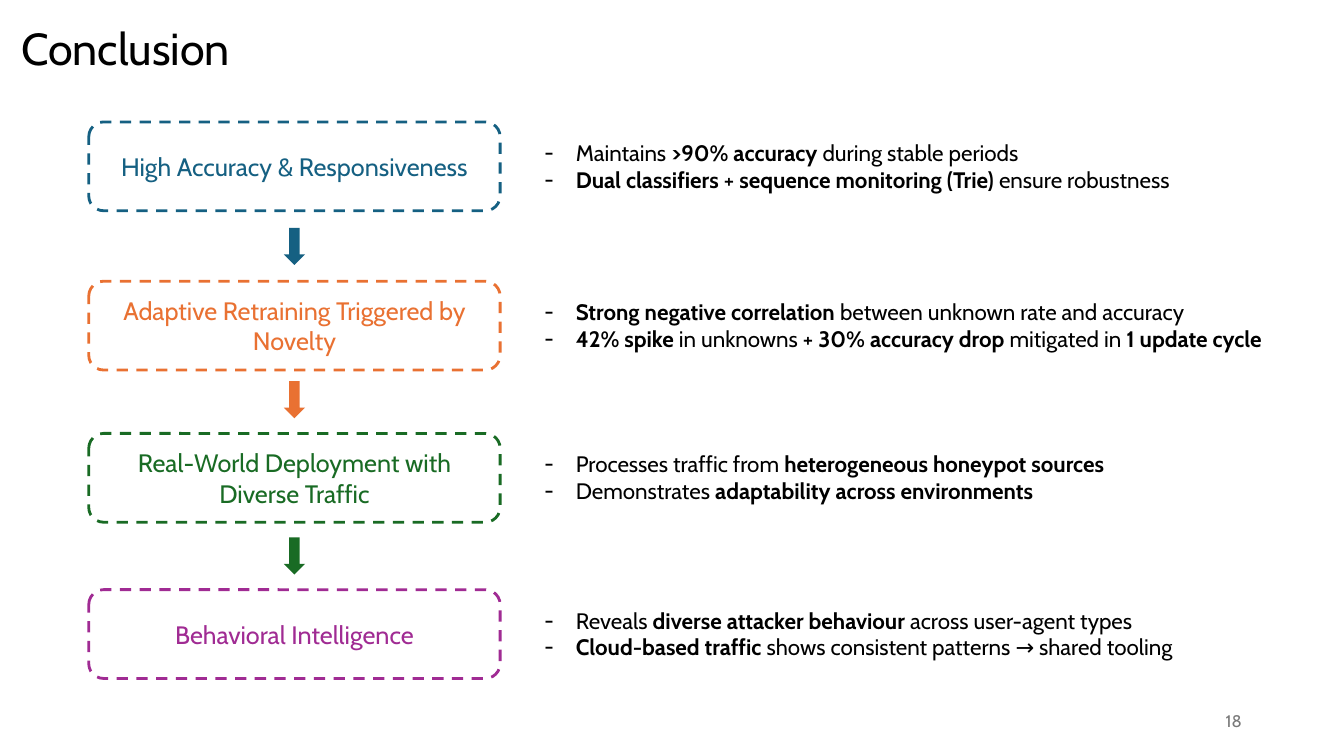
from lxml import etree
from pptx import Presentation
from pptx.dml.color import RGBColor
from pptx.enum.dml import MSO_LINE
from pptx.enum.shapes import MSO_SHAPE
from pptx.enum.text import MSO_ANCHOR, MSO_AUTO_SIZE, PP_ALIGN
from pptx.oxml.ns import qn
from pptx.util import Pt

DASH = MSO_LINE.DASH
ROUNDED, DOWN_ARROW = MSO_SHAPE.ROUNDED_RECTANGLE, MSO_SHAPE.DOWN_ARROW
TOP, MIDDLE = MSO_ANCHOR.TOP, MSO_ANCHOR.MIDDLE
NO_AUTOFIT = MSO_AUTO_SIZE.NONE
LEFT, CENTER, RIGHT = PP_ALIGN.LEFT, PP_ALIGN.CENTER, PP_ALIGN.RIGHT

BLACK = RGBColor(0x00, 0x00, 0x00)
WHITE = RGBColor(0xFF, 0xFF, 0xFF)
GRAY = RGBColor(0x79, 0x79, 0x79)
BLUE = RGBColor(0x15, 0x60, 0x82)
ORANGE = RGBColor(0xE9, 0x71, 0x32)
GREEN = RGBColor(0x19, 0x6B, 0x24)
PURPLE = RGBColor(0xA0, 0x2B, 0x93)

FONT = "Cabin"
BOX_LEFT, BOX_WIDTH, BOX_HEIGHT = 63.4, 293.8, 63.4
ARROW_WIDTH, ARROW_HEIGHT = 15.1, 26.6
LIST_LEFT, LIST_HEIGHT, LIST_OFFSET = 381.6, 46, 8.6
LIST_INDENT = 22.5

CONCLUSIONS = [
    ("High Accuracy & Responsiveness", BLUE, 87.1, 162.7, 523, [
        "Maintains *>90% accuracy* during stable periods",
        "*Dual classifiers* + *sequence monitoring (Trie)* ensure robustness"]),
    ("Adaptive Retraining Triggered by Novelty", ORANGE, 200.9, 272.2, 578, [
        "*Strong negative correlation* between unknown rate and accuracy",
        "*42% spike* in unknowns + *30% accuracy drop* mitigated in *1 update cycle*"]),
    ("Real-World Deployment with Diverse Traffic", GREEN, 309.6, 383.8, 482, [
        "Processes traffic from *heterogeneous honeypot sources*",
        "Demonstrates *adaptability across environments*"]),
    ("Behavioral Intelligence", PURPLE, 421.2, None, 482, [
        "Reveals *diverse attacker behaviour *across user-agent types",
        "*Cloud-based traffic *shows consistent patterns → shared tooling"]),
]


def place(shape, left, top, width, height, anchor):
    shape.left, shape.top = Pt(left), Pt(top)
    shape.width, shape.height = Pt(width), Pt(height)
    frame = shape.text_frame
    frame.word_wrap = True
    frame.auto_size = NO_AUTOFIT
    frame.vertical_anchor = anchor
    return frame


def add_run(paragraph, text, size, color, bold=False):
    run = paragraph.add_run()
    run.text = text
    run.font.name = FONT
    run.font.size = Pt(size)
    run.font.bold = bold
    run.font.color.rgb = color


presentation = Presentation()
presentation.slide_width, presentation.slide_height = Pt(960), Pt(540)
comparison_layout = presentation.slide_layouts[4]
slide = presentation.slides.add_slide(comparison_layout)

title = place(slide.shapes.title, 7.9, 10.1, 853.2, 28.8, MIDDLE).paragraphs[0]
title.alignment = LEFT
title.line_spacing = 1.5
add_run(title, "Conclusion", 32, BLACK)

number_box = slide.shapes.add_textbox(0, 0, 0, 0)
number = place(number_box, 678.2, 500.4, 216, 28.8, MIDDLE).paragraphs[0]
number.alignment = RIGHT
add_run(number, "18", 12, GRAY)

for index, (heading, color, top, arrow_top, list_width, points) in enumerate(CONCLUSIONS, 1):
    box = slide.shapes.add_shape(ROUNDED, 0, 0, 0, 0)
    label = place(box, BOX_LEFT, top, BOX_WIDTH, BOX_HEIGHT, MIDDLE).paragraphs[0]
    box.shadow.inherit = False
    box.fill.solid()
    box.fill.fore_color.rgb = WHITE
    box.line.color.rgb = color
    box.line.width = Pt(2)
    box.line.dash_style = DASH
    label.alignment = CENTER
    add_run(label, heading, 18, color)

    if arrow_top is not None:
        arrow_left = BOX_LEFT + (BOX_WIDTH - ARROW_WIDTH) / 2
        arrow = slide.shapes.add_shape(
            DOWN_ARROW, Pt(arrow_left), Pt(arrow_top), Pt(ARROW_WIDTH), Pt(ARROW_HEIGHT))
        arrow.shadow.inherit = False
        arrow.fill.solid()
        arrow.fill.fore_color.rgb = color
        arrow.line.fill.background()

    frame = place(slide.placeholders[index], LIST_LEFT, top + LIST_OFFSET,
                  list_width, LIST_HEIGHT, TOP)
    for position, point in enumerate(points):
        paragraph = frame.add_paragraph() if position else frame.paragraphs[0]
        properties = paragraph._p.get_or_add_pPr()
        properties.set("marL", str(Pt(LIST_INDENT)))
        properties.set("indent", str(-Pt(LIST_INDENT)))
        etree.SubElement(properties, qn("a:buFont")).set("typeface", FONT)
        etree.SubElement(properties, qn("a:buChar")).set("char", "-")
        paragraph.alignment = LEFT
        paragraph.space_before = Pt(0)
        for part, text in enumerate(point.split("*")):
            if text:
                add_run(paragraph, text, 16, BLACK, bold=part % 2 == 1)

presentation.save("out.pptx")
